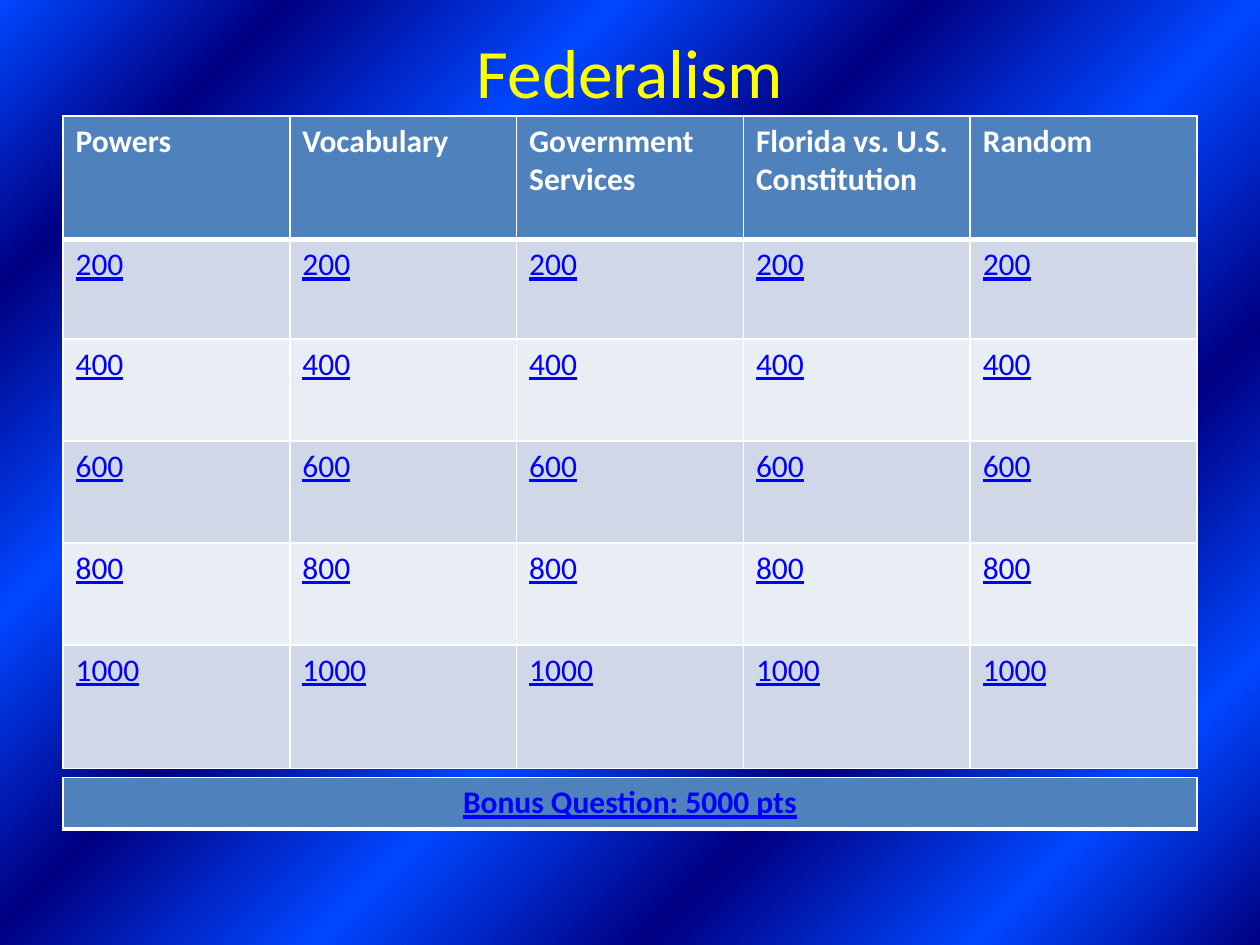
import pptx
import pptx.dml.color
import pptx.enum.text
import pptx.oxml
import pptx.oxml.ns
import pptx.util
from dataclasses import dataclass

Inches = pptx.util.Inches
CENTER = pptx.enum.text.PP_ALIGN.CENTER


@dataclass(frozen=True)
class Theme:
    font: str = "Calibri"
    title_size: float = 39.6
    cell_size: float = 18
    title: str = "FFFF00"
    header_text: str = "FFFFFF"
    points_text: str = "0000FF"
    header_fill: str = "4F81BD"
    bands: tuple = ("D0D8E8", "E9EDF4")
    border: str = "FFFFFF"
    dark: str = "000082"
    bright: str = "0047FF"


THEME = Theme()
CATEGORIES = ["Powers", "Vocabulary", "Government Services",
              "Florida vs. U.S. Constitution", "Random"]
POINTS = [200, 400, 600, 800, 1000]
ROW_HEIGHTS = [0.98, 0.79, 0.81, 0.81, 0.81, 0.98]
LEFT, WIDTH = 0.5, 9


def rgb(color):
    return pptx.dml.color.RGBColor.from_string(color)


def set_background(slide):
    """Fill the slide with alternating dark and bright bands."""
    stops = "".join(
        f'<a:gs pos="{percent * 1000}"><a:srgbClr val="{color}"/></a:gs>'
        for percent, color in zip((0, 13, 28, 43, 58, 72, 87, 100),
                                  (THEME.dark, THEME.bright) * 4))
    fill = slide.background.fill
    fill.solid()
    properties = slide.element.cSld.find(pptx.oxml.ns.qn("p:bg")).bgPr
    gradient = pptx.oxml.parse_xml(
        f'<a:gradFill {pptx.oxml.ns.nsdecls("a")} rotWithShape="1">'
        f'<a:gsLst>{stops}</a:gsLst><a:path path="circle">'
        '<a:fillToRect l="100000" t="100000"/></a:path>'
        '<a:tileRect r="-100000" b="-100000"/></a:gradFill>')
    properties.replace(properties[0], gradient)


def write(frame, text, size, color, bold=False, underline=False, align=None):
    frame.text = text
    paragraph = frame.paragraphs[0]
    paragraph.alignment = align
    font = paragraph.runs[0].font
    font.name = THEME.font
    font.size = pptx.util.Pt(size)
    font.color.rgb = rgb(color)
    font.bold = bold
    font.underline = underline


def add_title(slide, text):
    title = slide.shapes.add_textbox(Inches(LEFT), Inches(0.3),
                                     Inches(WIDTH), Inches(0.53))
    frame = title.text_frame
    frame.word_wrap = True
    frame.vertical_anchor = pptx.enum.text.MSO_ANCHOR.MIDDLE
    write(frame, text, THEME.title_size, THEME.title, align=CENTER)


def style_cell(cell, fill, bottom=1):
    """Set the borders, widths in points, and then the fill."""
    properties = cell._tc.get_or_add_tcPr()
    for side, width in (("L", 1), ("R", 1), ("T", 1), ("B", bottom)):
        properties.append(pptx.oxml.parse_xml(
            f'<a:ln{side} {pptx.oxml.ns.nsdecls("a")} w="{pptx.util.Pt(width)}">'
            f'<a:solidFill><a:srgbClr val="{THEME.border}"/></a:solidFill>'
            f'</a:ln{side}>'))
    cell.fill.solid()
    cell.fill.fore_color.rgb = rgb(fill)


def add_grid(slide, top, row_heights, column_count):
    grid = slide.shapes.add_table(
        len(row_heights), column_count, Inches(LEFT), Inches(top),
        Inches(WIDTH), Inches(sum(row_heights))).table
    for row, height in zip(grid.rows, row_heights):
        row.height = Inches(height)
    return grid


def add_board(slide):
    board = add_grid(slide, 0.92, ROW_HEIGHTS, len(CATEGORIES))
    for column, category in enumerate(CATEGORIES):
        header = board.cell(0, column)
        style_cell(header, THEME.header_fill, bottom=3)
        write(header.text_frame, category, THEME.cell_size,
              THEME.header_text, bold=True)
        for row, points in enumerate(POINTS, start=1):
            question = board.cell(row, column)
            style_cell(question, THEME.bands[(row - 1) % 2])
            write(question.text_frame, str(points), THEME.cell_size,
                  THEME.points_text, underline=True)


def add_bonus(slide, text):
    bonus = add_grid(slide, 6.17, [0.41], 1).cell(0, 0)
    style_cell(bonus, THEME.header_fill, bottom=3)
    write(bonus.text_frame, text, THEME.cell_size, THEME.points_text,
          bold=True, underline=True, align=CENTER)


def main():
    deck = pptx.Presentation()
    deck.slide_width, deck.slide_height = Inches(10), Inches(7.5)
    slide = deck.slides.add_slide(deck.slide_layouts[6])
    set_background(slide)
    add_title(slide, "Federalism")
    add_board(slide)
    add_bonus(slide, "Bonus Question: 5000 pts")
    deck.save("out.pptx")


if __name__ == "__main__":
    main()
